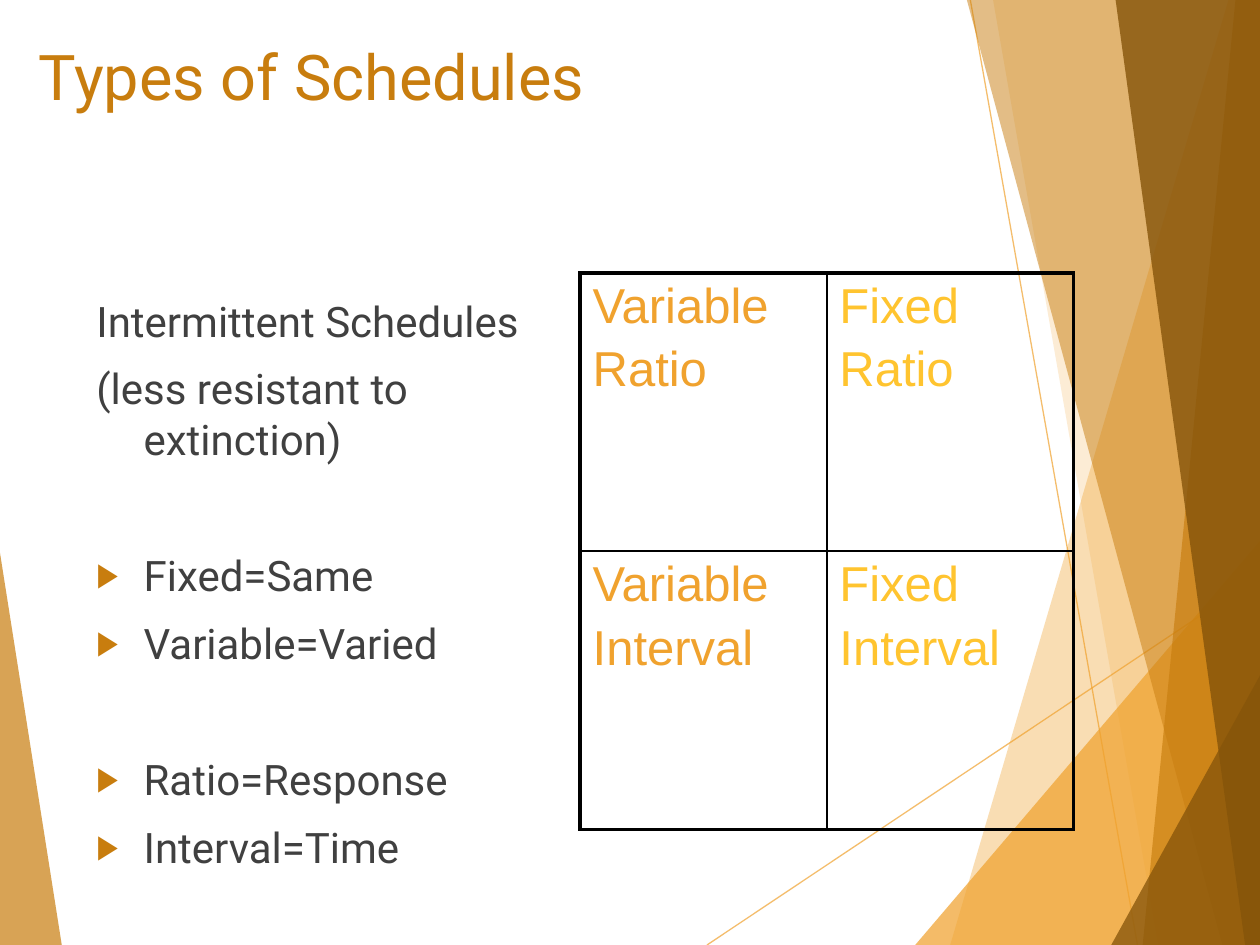
from dataclasses import dataclass

from lxml import etree
from pptx import Presentation
from pptx.dml.color import RGBColor
from pptx.enum.shapes import MSO_CONNECTOR
from pptx.enum.text import MSO_ANCHOR, MSO_AUTO_SIZE, PP_ALIGN
from pptx.oxml.ns import qn
from pptx.util import Pt

STRAIGHT = MSO_CONNECTOR.STRAIGHT
TOP = MSO_ANCHOR.TOP
FIXED = MSO_AUTO_SIZE.NONE
LEFT = PP_ALIGN.LEFT


@dataclass(frozen=True)
class Theme:
    gold: str = "F0A22E"
    amber: str = "C87D0E"
    brown: str = "85540A"
    yellow: str = "FFC42F"
    gray: str = "404040"
    black: str = "000000"
    font: str = "Roboto"
    cell_font: str = "Arial"
    title: int = 36
    body: int = 24
    cell: int = 28


THEME = Theme()
WIDE, HIGH = 720, 540

RAYS = [((404, 540), (720, 329)), ((554.5, 0), (650, 540))]
SHARDS = [
    (THEME.gold, 36, [(702, 0), (543, 540), (720, 540), (720, 0)]),
    (THEME.gold, 20, [(567.5, 0), (662, 540), (720, 540), (720, 0)]),
    (THEME.gold, 72, [(523, 540), (720, 309), (720, 540)]),
    (THEME.amber, 50, [(552.5, 0), (698.5, 540), (720, 540), (720, 0)]),
    (THEME.amber, 66, [(706, 0), (653, 540), (720, 540), (720, 0)]),
    (THEME.brown, 80, [(637.5, 0), (711.5, 540), (720, 540), (720, 0)]),
    (THEME.brown, 76, [(635, 540), (720, 386), (720, 540)]),
    (THEME.amber, 70, [(0, 316), (35.3, 540), (0, 540)]),
]
NOTES = [
    ("Intermittent Schedules", 10, False),
    ("(less resistant to extinction)", 10, False),
    ("Fixed=Same", 49, True),
    ("Variable=Varied", 10, True),
    ("Ratio=Response", 49, True),
    ("Interval=Time", 10, True),
]
COLS = [("Variable", THEME.gold), ("Fixed", THEME.yellow)]
ROWS = ["Ratio", "Interval"]


def add_node(host, tag, **attrs):
    node = etree.SubElement(host, qn(tag))
    for key, val in attrs.items():
        node.set(key, str(val))
    return node


def fade(fill, alpha):
    tint = next(fill.iter(qn("a:srgbClr")))
    add_node(tint, "a:alpha", val=alpha * 1000)


def write(frame, text, *, size, color, font, gap=0, first=False):
    para = frame.paragraphs[0] if first else frame.add_paragraph()
    para.alignment = LEFT
    para.space_before = Pt(gap)
    run = para.add_run()
    run.text = text
    run.font.size = Pt(size)
    run.font.name = font
    run.font.color.rgb = RGBColor.from_string(color)
    return para


def hang(para, bullet):
    props = para._p.get_or_add_pPr()
    props.set("marL", str(Pt(27)))
    props.set("indent", str(-Pt(27)))
    if bullet:
        tint = add_node(props, "a:buClr")
        add_node(tint, "a:srgbClr", val=THEME.amber)
        add_node(props, "a:buSzPct", val=80000)
        add_node(props, "a:buFont", typeface=THEME.cell_font)
        add_node(props, "a:buChar", char="▶")


def add_ray(group, start, end):
    points = [Pt(val) for val in (*start, *end)]
    ray = group.shapes.add_connector(STRAIGHT, *points)
    ray.line.width = Pt(0.75)
    ray.line.color.rgb = RGBColor.from_string(THEME.gold)
    props = ray.element.spPr
    fade(props, 70)
    add_node(props, "a:effectLst")


def add_shard(group, color, alpha, points):
    first, *rest = [(Pt(x), Pt(y)) for x, y in points]
    maker = group.shapes.build_freeform(*first)
    maker.add_line_segments(rest, close=True)
    shard = maker.convert_to_shape()
    shard.shadow.inherit = False
    shard.line.fill.background()
    shard.fill.solid()
    shard.fill.fore_color.rgb = RGBColor.from_string(color)
    fade(shard.element.spPr, alpha)


def add_decor(slide):
    group = slide.shapes.add_group_shape()
    for start, end in RAYS:
        add_ray(group, start, end)
    for color, alpha, points in SHARDS:
        add_shard(group, color, alpha, points)


def set_title(slide, text):
    title = slide.shapes.title
    title.left, title.top = Pt(15), Pt(18)
    title.width, title.height = Pt(631), Pt(72)
    frame = title.text_frame
    frame.vertical_anchor = TOP
    frame.auto_size = FIXED
    write(frame, text, size=THEME.title, color=THEME.amber,
          font=THEME.font, first=True)
    slide.shapes.element.append(title.element)


def add_notes(slide):
    box = slide.shapes.add_textbox(Pt(48), Pt(126), Pt(306), Pt(348))
    frame = box.text_frame
    frame.word_wrap = True
    frame.margin_top = Pt(42.6)
    for num, (text, gap, bullet) in enumerate(NOTES):
        para = write(frame, text, size=THEME.body, color=THEME.gray,
                     font=THEME.font, gap=gap, first=num == 0)
        hang(para, bullet)


def set_edges(cell, row, col):
    props = cell._tc.get_or_add_tcPr()
    outer = {"L": col == 0, "R": col == len(COLS) - 1,
             "T": row == 0, "B": row == len(ROWS) - 1}
    for side, thick in outer.items():
        edge = add_node(props, f"a:ln{side}", w=Pt(2.25 if thick else 1))
        fill = add_node(edge, "a:solidFill")
        add_node(fill, "a:srgbClr", val=THEME.black)


def add_grid(slide):
    side, tall = 141, 159
    frame = slide.shapes.add_table(
        len(ROWS), len(COLS), Pt(331.5), Pt(156),
        Pt(side * len(COLS)), Pt(tall * len(ROWS)))
    table = frame.table
    table.first_row = table.horz_banding = False
    for row, basis in enumerate(ROWS):
        table.rows[row].height = Pt(tall)
        for col, (kind, color) in enumerate(COLS):
            table.columns[col].width = Pt(side)
            cell = table.cell(row, col)
            set_edges(cell, row, col)
            cell.fill.background()
            for num, word in enumerate((kind, basis)):
                write(cell.text_frame, word, size=THEME.cell, color=color,
                      font=THEME.cell_font, gap=5, first=num == 0)


def main():
    deck = Presentation()
    deck.slide_width, deck.slide_height = Pt(WIDE), Pt(HIGH)
    slide = deck.slides.add_slide(deck.slide_layouts[5])
    add_decor(slide)
    set_title(slide, "Types of Schedules")
    add_notes(slide)
    add_grid(slide)
    deck.save("out.pptx")


if __name__ == "__main__":
    main()
